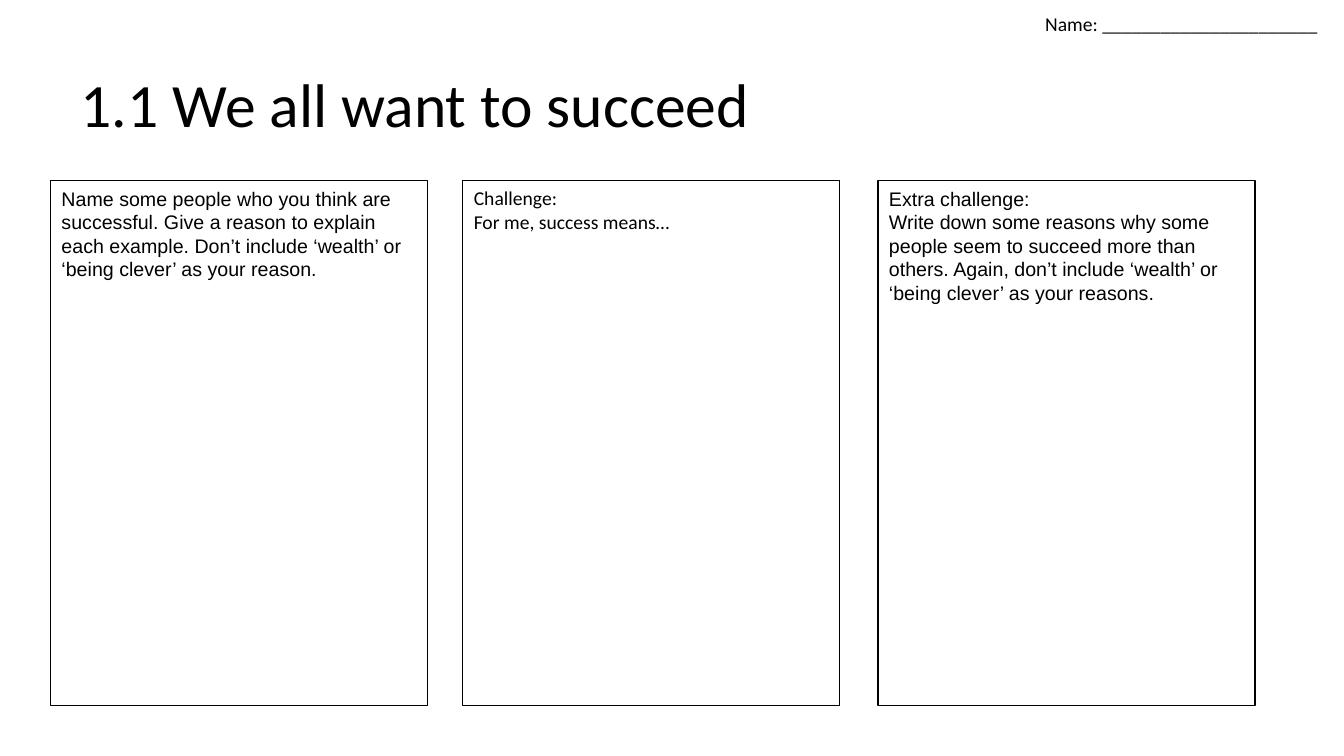
from pptx import Presentation
from pptx.dml.color import RGBColor
from pptx.enum.shapes import MSO_SHAPE
from pptx.enum.text import MSO_ANCHOR, MSO_AUTO_SIZE, PP_ALIGN
from pptx.util import Pt

BLACK = RGBColor(0x00, 0x00, 0x00)
WHITE = RGBColor(0xFF, 0xFF, 0xFF)
RECTANGLE = MSO_SHAPE.RECTANGLE
MIDDLE = MSO_ANCHOR.MIDDLE
LEFT = PP_ALIGN.LEFT
NO_FIT = MSO_AUTO_SIZE.NONE
GROW = MSO_AUTO_SIZE.SHAPE_TO_FIT_TEXT


def write(frame, lines, font, size):
    for index, line in enumerate(lines):
        para = frame.paragraphs[0] if index == 0 else frame.add_paragraph()
        para.alignment = LEFT
        span = para.add_run()
        span.text = line
        span.font.name = font
        span.font.size = Pt(size)
        span.font.color.rgb = BLACK


def add_label(shapes, left, top, width, height, lines, font):
    box = shapes.add_textbox(Pt(left), Pt(top), Pt(width), Pt(height))
    frame = box.text_frame
    frame.word_wrap = True
    frame.auto_size = GROW
    frame.margin_left = frame.margin_right = Pt(3.6)
    frame.margin_top = frame.margin_bottom = Pt(3.6)
    write(frame, lines, font, 14)


deck = Presentation()
deck.slide_width = Pt(960)
deck.slide_height = Pt(540)
page = deck.slides.add_slide(deck.slide_layouts[5])
page.background.fill.solid()
page.background.fill.fore_color.rgb = WHITE

# Title
title = page.shapes.title
title.left, title.top = Pt(50.4), Pt(24.5)
title.width, title.height = Pt(828), Pt(104.4)
title.text_frame.auto_size = NO_FIT
title.text_frame.vertical_anchor = MIDDLE
write(title.text_frame, ["1.1 We all want to succeed"], "Calibri", 44)
title.text_frame.paragraphs[0].line_spacing = 0.9

# Name line
add_label(page.shapes, 743, 5, 264.2, 23,
          ["Name: ______________________"], "Calibri")

# Answer panels: left edge, prompt height, font, prompt
panels = [
    (36, 70.6, "Arial", [
        "Name some people who you think are successful. Give a reason to "
        "explain each example. Don’t include ‘wealth’ or ‘being clever’ as "
        "your reason."]),
    (330.5, 41, "Calibri", ["Challenge:", "For me, success means…"]),
    (627.1, 92.2, "Arial", [
        "Extra challenge:",
        "Write down some reasons why some people seem to succeed more than "
        "others. Again, don’t include ‘wealth’ or ‘being clever’ as your "
        "reasons."]),
]
for left, prompt_height, font, prompt in panels:
    panel = page.shapes.add_group_shape()
    frame_box = panel.shapes.add_shape(
        RECTANGLE, Pt(left), Pt(129), Pt(269.3), Pt(375))
    frame_box.shadow.inherit = False
    frame_box.fill.background()
    frame_box.line.color.rgb = BLACK
    frame_box.line.width = Pt(1)
    add_label(panel.shapes, left + 4.3, 129.6, 260.6, prompt_height, prompt, font)

deck.save("out.pptx")
